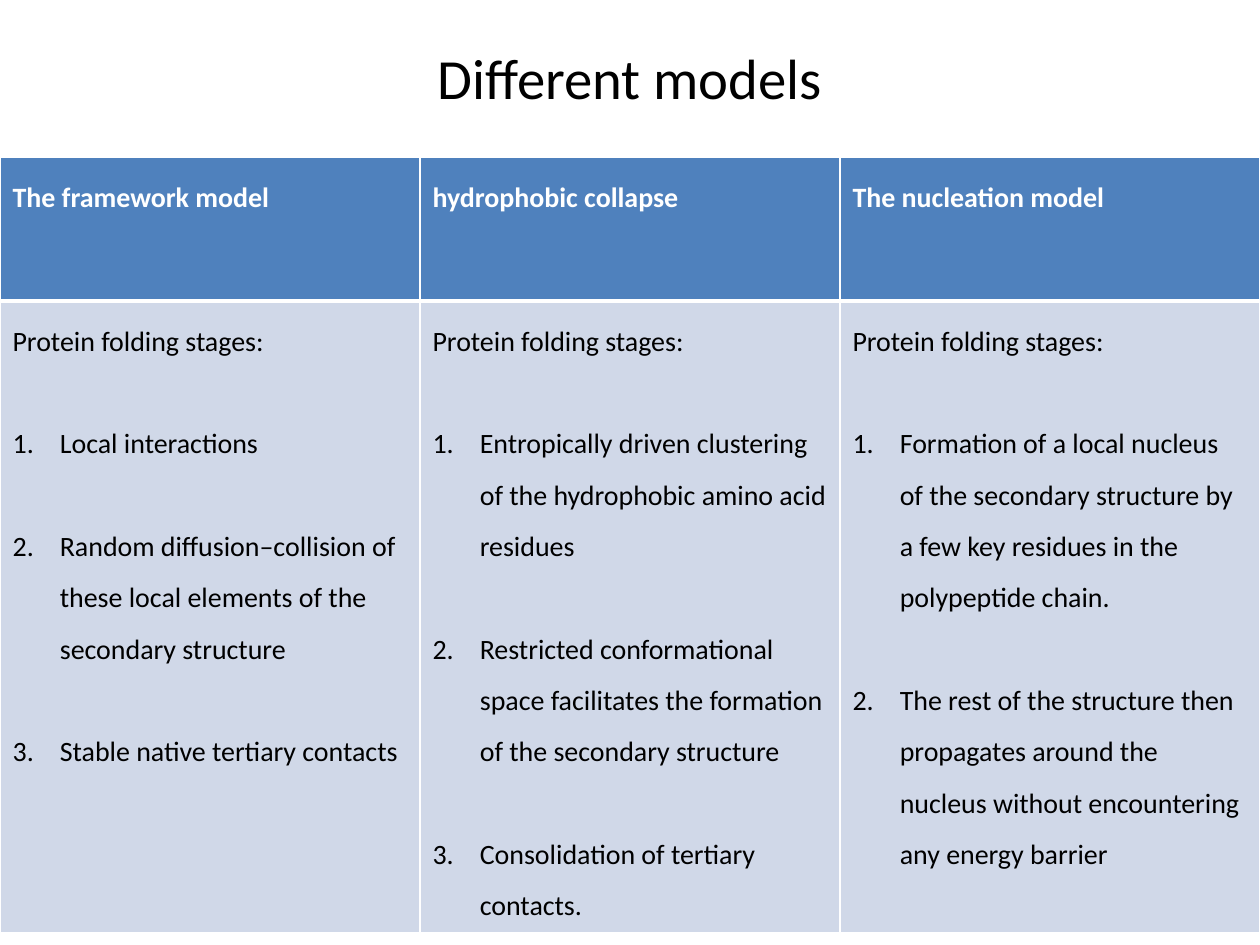
"""Build a slide comparing three models of protein folding in a table."""
from dataclasses import dataclass

from lxml import etree
from pptx import Presentation
from pptx import util as u
from pptx.dml.color import RGBColor
from pptx.enum import text
from pptx.oxml.ns import qn

COLORS = {"header": "4F81BD", "body": "D0D8E8", "white": "FFFFFF", "black": "000000"}
FONT = "Calibri"
TEXT_SIZE = 16
LINE_SPACING = 1.5
STEP_GAP = 29.3
STEP_INDENT = 27
ROW_HEIGHTS = (82, 360.8)


@dataclass
class Model:
    name: str
    stages: list[str]


MODELS = [
    Model("The framework model", [
        "Local interactions",
        "Random diffusion–collision of these local elements of the secondary structure",
        "Stable native tertiary contacts",
    ]),
    Model("hydrophobic collapse", [
        "Entropically driven clustering of the hydrophobic amino acid residues",
        "Restricted conformational space facilitates the formation of the secondary structure",
        "Consolidation of tertiary contacts.",
    ]),
    Model("The nucleation model", [
        "Formation of a local nucleus of the secondary structure by a few key residues "
        "in the polypeptide chain.",
        "The rest of the structure then propagates around the nucleus without encountering "
        "any energy barrier",
    ]),
]


def format_runs(p, size: float, color: str, bold: bool = False) -> None:
    for r in p.runs:
        r.font.name = FONT
        r.font.size = u.Pt(size)
        r.font.bold = bold
        r.font.color.rgb = RGBColor.from_string(COLORS[color])


def number_step(p) -> None:
    p.space_before = u.Pt(STEP_GAP)
    pPr = p._p.get_or_add_pPr()
    pPr.set("marL", str(u.Pt(STEP_INDENT)))
    pPr.set("indent", str(-u.Pt(STEP_INDENT)))
    etree.SubElement(pPr, qn("a:buFont"), typeface="+mj-lt")
    etree.SubElement(pPr, qn("a:buAutoNum"), type="arabicPeriod")


def draw_borders(cell, top: float, bottom: float) -> None:
    tcPr = cell._tc.get_or_add_tcPr()
    for side, width in (("L", 1), ("R", 1), ("T", top), ("B", bottom)):
        ln = etree.SubElement(tcPr, qn(f"a:ln{side}"), w=str(u.Pt(width)))
        fill = etree.SubElement(ln, qn("a:solidFill"))
        etree.SubElement(fill, qn("a:srgbClr"), val=COLORS["white"])


def fill_cell(cell, lines: list[str], fill: str, color: str, bold: bool = False) -> None:
    tf = cell.text_frame
    tf.text = "\n".join(lines)
    for i, p in enumerate(tf.paragraphs):
        p.line_spacing = LINE_SPACING
        format_runs(p, TEXT_SIZE, color, bold)
        if i:
            number_step(p)
    cell.fill.solid()
    cell.fill.fore_color.rgb = RGBColor.from_string(COLORS[fill])


def add_title(s, title: str) -> None:
    sp = s.shapes.title
    sp.left, sp.top, sp.width, sp.height = u.Pt(36), u.Pt(21.6), u.Pt(648), u.Pt(44.6)
    tf = sp.text_frame
    tf.text = title
    tf.auto_size = text.MSO_AUTO_SIZE.NONE
    tf.vertical_anchor = text.MSO_ANCHOR.MIDDLE
    p = tf.paragraphs[0]
    p.alignment = text.PP_ALIGN.CENTER
    format_runs(p, 32.4, "black")


def add_models_table(s, models: list[Model]) -> None:
    table = s.shapes.add_table(2, len(models), 0, u.Pt(90), u.Pt(720),
                               u.Pt(sum(ROW_HEIGHTS))).table
    for row, height in zip(table.rows, ROW_HEIGHTS):
        row.height = u.Pt(height)
    for col, model in enumerate(models):
        header, body = table.cell(0, col), table.cell(1, col)
        draw_borders(header, 1, 3)
        draw_borders(body, 3, 1)
        fill_cell(header, [model.name], "header", "white", bold=True)
        fill_cell(body, ["Protein folding stages:", *model.stages], "body", "black")


def main() -> None:
    prs = Presentation()
    prs.slide_width, prs.slide_height = u.Pt(720), u.Pt(540)
    s = prs.slides.add_slide(prs.slide_layouts[5])
    add_title(s, "Different models")
    add_models_table(s, MODELS)
    prs.save("out.pptx")


if __name__ == "__main__":
    main()
